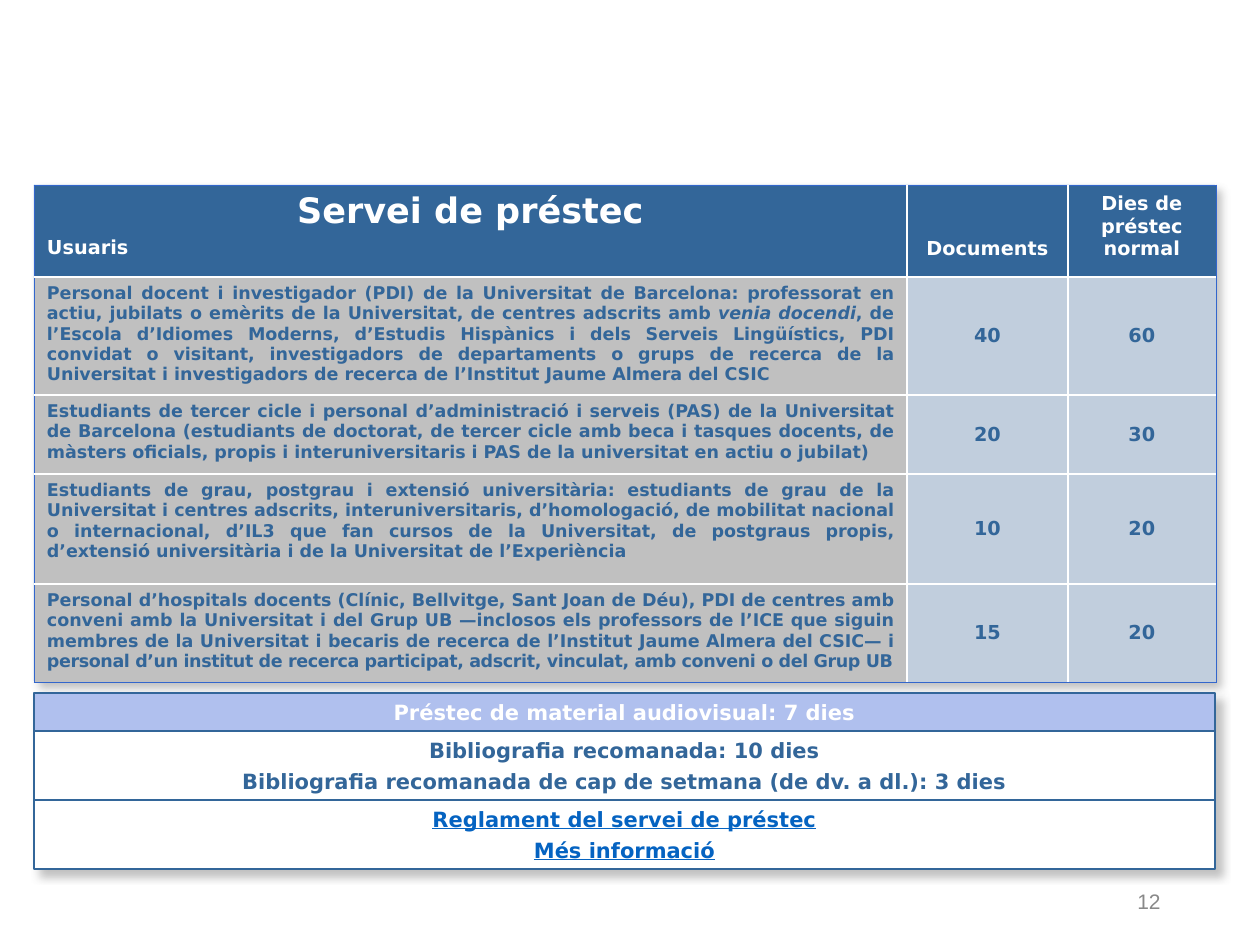
"""Build the slide on the library loan service."""
from lxml import etree
from pptx import Presentation
from pptx.dml.color import RGBColor
from pptx.enum.shapes import MSO_SHAPE
from pptx.enum.text import MSO_ANCHOR, PP_ALIGN
from pptx.oxml import parse_xml
from pptx.oxml.ns import nsdecls, qn
from pptx.util import Pt

RECT = MSO_SHAPE.RECTANGLE
TOP, MID, LOW = MSO_ANCHOR.TOP, MSO_ANCHOR.MIDDLE, MSO_ANCHOR.BOTTOM
LEFT, MIDDLE = PP_ALIGN.LEFT, PP_ALIGN.CENTER
RIGHT, FULL = PP_ALIGN.RIGHT, PP_ALIGN.JUSTIFY

WHITE = RGBColor(0xFF, 0xFF, 0xFF)
NAVY = RGBColor(0x33, 0x66, 0x99)
EDGE = RGBColor(0x33, 0x66, 0xCC)
SKY = RGBColor(0x5B, 0x9B, 0xD5)
LILAC = RGBColor(0xB0, 0xC0, 0xEE)
SILVER = RGBColor(0xC0, 0xC0, 0xC0)
PALE = RGBColor(0xC1, 0xCE, 0xDD)
LINK = RGBColor(0x05, 0x63, 0xC1)
GREY = RGBColor(0x89, 0x89, 0x89)
SHADE = RGBColor(0x64, 0x64, 0x64)

FONT = "DejaVu Sans"
SIDE, WIDE = 34, 1181
GRID_TOP, BARS_TOP = 185, 693
COLS = [873, 161, 148]
ROWS = [91, 118, 79, 110, 98]

USERS = [
    ([("Personal docent i investigador (PDI) de la Universitat de Barcelona: "
       "professorat en actiu, jubilats o emèrits de la Universitat, de centres "
       "adscrits amb ", {}),
      ("venia docendi", {"italic": True}),
      (", de l’Escola d’Idiomes Moderns, d’Estudis Hispànics i dels Serveis "
       "Lingüístics, PDI convidat o visitant, investigadors de departaments o "
       "grups de recerca de la Universitat i investigadors de recerca de "
       "l’Institut Jaume Almera del CSIC", {})], "40", "60"),
    ([("Estudiants de tercer cicle i personal d’administració i serveis (PAS) "
       "de la Universitat de Barcelona (estudiants de doctorat, de tercer cicle "
       "amb beca i tasques docents, de màsters oficials, propis i "
       "interuniversitaris i PAS de la universitat en actiu o jubilat)", {})],
     "20", "30"),
    ([("Estudiants de grau, postgrau i extensió universitària: estudiants de "
       "grau de la Universitat i centres adscrits, interuniversitaris, "
       "d’homologació, de mobilitat nacional o internacional, d’IL3 que fan "
       "cursos de la Universitat, de postgraus propis, d’extensió universitària "
       "i de la Universitat de l’Experiència", {})], "10", "20"),
    ([("Personal d’hospitals docents (Clínic, Bellvitge, Sant Joan de Déu), PDI "
       "de centres amb conveni amb la Universitat i del Grup UB —inclosos els "
       "professors de l’ICE que siguin membres de la Universitat i becaris de "
       "recerca de l’Institut Jaume Almera del CSIC— i ", {}),
      ("personal d’un institut de recerca participat, adscrit, vinculat, amb "
       "conveni o del Grup UB", {"track": -20})], "15", "20"),
]

BARS = [
    (38, LILAC, WHITE, False, ["Préstec de material audiovisual: 7 dies"]),
    (69, WHITE, NAVY, False,
     ["Bibliografia recomanada: 10 dies",
      "Bibliografia recomanada de cap de setmana (de dv. a dl.): 3 dies"]),
    (69, WHITE, LINK, True,
     ["Reglament del servei de préstec", "Més informació"]),
]


def px(num):
    """Turn pixels into EMU."""
    return round(num * 914400 / 126)


def add_run(para, text, size, color, font=FONT, bold=True, italic=False,
            line=False, track=0):
    """Add one styled run to a paragraph."""
    run = para.add_run()
    run.text = text
    face = run.font
    face.name, face.size, face.bold = font, Pt(size), bold
    face.italic, face.underline = italic, line
    face.color.rgb = color
    if track:
        run._r.get_or_add_rPr().set("spc", str(track))


def add_para(frame, runs, size, color, align=MIDDLE, **style):
    """Fill the first empty paragraph or append a spaced one."""
    para = frame.paragraphs[0]
    if para.runs:
        para = frame.add_paragraph()
        para.space_before = Pt(3)
    para.alignment = align
    for text, extra in runs:
        add_run(para, text, size, color, **{**style, **extra})


def add_box(slide, top, high, fill, edge, width):
    """Add a full-width rectangle."""
    box = slide.shapes.add_shape(RECT, px(SIDE), px(top), px(WIDE), px(high))
    box.shadow.inherit = False
    box.fill.solid()
    box.fill.fore_color.rgb = fill
    box.line.color.rgb = edge
    box.line.width = Pt(width)
    return box


def add_shade(box):
    """Give a box a soft shadow to the lower right."""
    glow = box._element.spPr.find(qn("a:effectLst"))
    glow.append(parse_xml(
        f'<a:outerShdw {nsdecls("a")} blurRad="{Pt(5)}" dist="{Pt(5)}" '
        f'dir="2700000" algn="tl" rotWithShape="0"><a:srgbClr val="{SHADE}">'
        '<a:alpha val="40000"/></a:srgbClr></a:outerShdw>'))


def set_edges(cell, row, col):
    """Draw thin blue outer borders and white inner ones."""
    props = cell._tc.get_or_add_tcPr()
    outer = {"lnL": col == 0, "lnR": col == len(COLS) - 1,
             "lnT": row == 0, "lnB": row == len(ROWS) - 1}
    for tag, out in outer.items():
        color, width = (EDGE, 0.5) if out else (WHITE, 1.5)
        edge = etree.SubElement(props, qn(f"a:{tag}"), w=str(Pt(width)))
        fill = etree.SubElement(edge, qn("a:solidFill"))
        etree.SubElement(fill, qn("a:srgbClr"), val=str(color))


def set_cell(grid, row, col, fill, anchor, low=6):
    """Format a table cell and return its text frame."""
    cell = grid.cell(row, col)
    set_edges(cell, row, col)
    cell.fill.solid()
    cell.fill.fore_color.rgb = fill
    cell.vertical_anchor = anchor
    cell.margin_left = cell.margin_right = px(13)
    cell.margin_top, cell.margin_bottom = px(6), px(low)
    return cell.text_frame


def add_grid(slide):
    """Add the table of users, documents and days."""
    grid = slide.shapes.add_table(
        len(ROWS), len(COLS), px(SIDE), px(GRID_TOP),
        px(sum(COLS)), px(sum(ROWS))).table
    for col, wide in zip(grid.columns, COLS):
        col.width = px(wide)
    for row, high in zip(grid.rows, ROWS):
        row.height = px(high)
    head = set_cell(grid, 0, 0, NAVY, TOP)
    add_para(head, [("Servei de préstec", {})], 20, WHITE)
    add_para(head, [("Usuaris", {})], 11, WHITE, LEFT)
    for col, text in enumerate(["Documents", "Dies de préstec normal"], 1):
        frame = set_cell(grid, 0, col, NAVY, LOW, 17)
        add_para(frame, [(text, {})], 11, WHITE)
    for row, (runs, *nums) in enumerate(USERS, 1):
        add_para(set_cell(grid, row, 0, SILVER, TOP), runs, 10, NAVY, FULL)
        for col, num in enumerate(nums, 1):
            frame = set_cell(grid, row, col, PALE, MID)
            add_para(frame, [(num, {})], 11, NAVY)


def add_bars(slide):
    """Stack the bars of special loans and links."""
    top = BARS_TOP
    for high, fill, color, line, texts in BARS:
        frame = add_box(slide, top, high, fill, NAVY, 0.75).text_frame
        frame.word_wrap = True
        frame.vertical_anchor = MID
        for text in texts:
            add_para(frame, [(text, {})], 12, color, line=line)
        top += high


def add_page(slide, num):
    """Add the page number."""
    frame = slide.shapes.add_textbox(
        px(890), px(876), px(283), px(50)).text_frame
    frame.word_wrap = True
    frame.vertical_anchor = MID
    add_para(frame, [(num, {})], 12, GREY, RIGHT, font="Arial", bold=False)


def main():
    """Build and save the slide."""
    deck = Presentation()
    deck.slide_width, deck.slide_height = px(1260), px(945)
    slide = deck.slides.add_slide(deck.slide_layouts[6])
    add_page(slide, "12")
    high = sum(bar[0] for bar in BARS)
    add_shade(add_box(slide, BARS_TOP, high, WHITE, NAVY, 0.5))
    add_shade(add_box(slide, GRID_TOP, sum(ROWS), SKY, EDGE, 0.5))
    add_grid(slide)
    add_bars(slide)
    deck.save("out.pptx")


if __name__ == "__main__":
    main()
